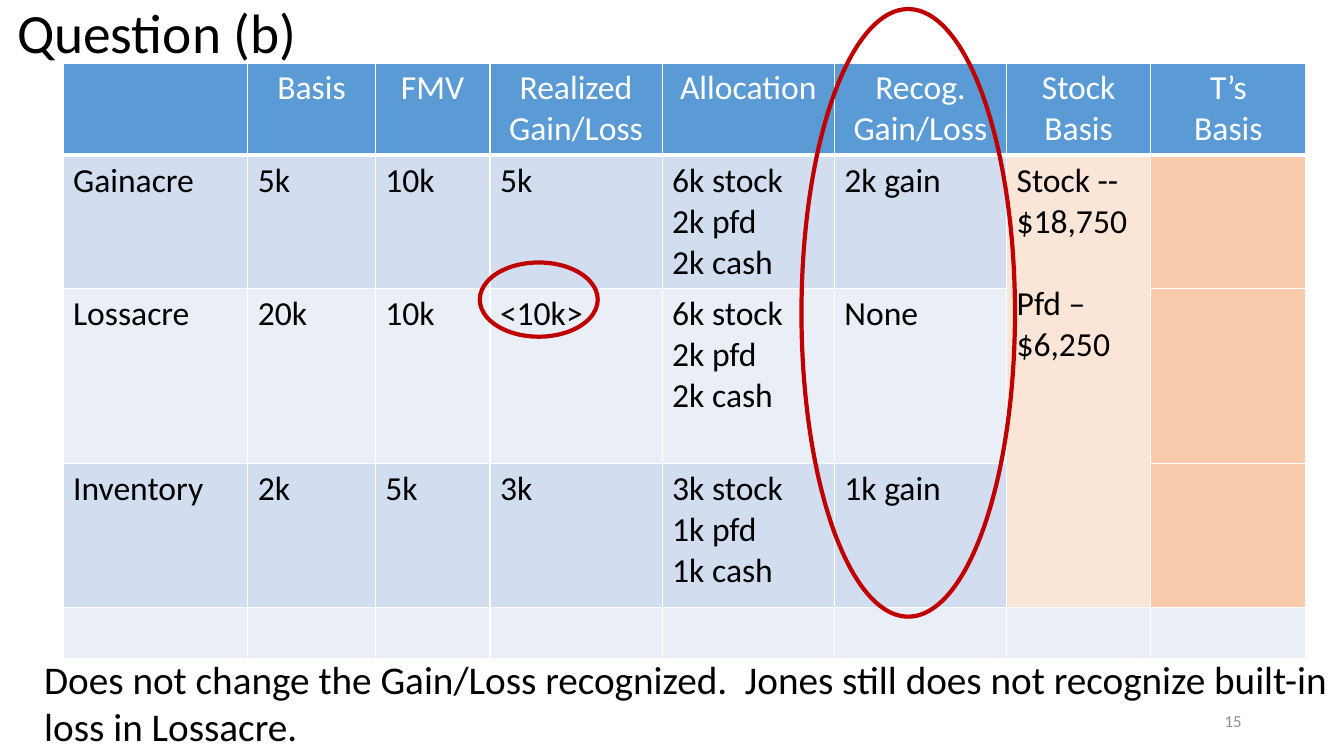
"""Build the Question (b) slide on gain and loss recognized."""
from typing import NamedTuple

from lxml import etree
from pptx import Presentation
from pptx import util as u
from pptx.dml.color import RGBColor
from pptx.enum import shapes, text
from pptx.oxml import ns

FONT = "Calibri"
BLACK, WHITE, RED, GREY = "000000", "FFFFFF", "C00000", "8C8C8C"
HEAD, BAND, PALE = "5B9BD5", "D2DEEF", "EAEFF7"
PEACH, ORANGE = "FBE5D6", "F8CBAD"
LEFT, RIGHT, CENTER = text.PP_ALIGN.LEFT, text.PP_ALIGN.RIGHT, text.PP_ALIGN.CENTER
TOP, MIDDLE = text.MSO_ANCHOR.TOP, text.MSO_ANCHOR.MIDDLE


class Box(NamedTuple):
    left: float
    top: float
    width: float
    height: float


class Note(NamedTuple):
    box: Box
    words: str
    size: float
    color: str
    align: text.PP_ALIGN
    anchor: text.MSO_ANCHOR


TITLE = Note(Box(5, 6.5, 214.5, 38), "Question (b)", 39.6, BLACK, LEFT, MIDDLE)
NOTES = [
    Note(Box(678, 500.5, 216, 28.75), "15", 12, GREY, RIGHT, MIDDLE),
    Note(Box(24.5, 464.5, 943, 99.5),
         "Does not change the Gain/Loss recognized.  Jones still does not "
         "recognize built-in loss in Lossacre.", 28, BLACK, LEFT, TOP),
]
RINGS = [Box(342.75, 187.5, 84.25, 53), Box(572.5, 6.5, 152.5, 434)]
GRID = Box(45, 45, 888, 424)
WIDTHS = [132, 91, 82, 123, 123, 123, 103, 111]
HEIGHTS = [65, 95.5, 124.5, 103, 36]
ROWS = [
    ["", "Basis", "FMV", "Realized\nGain/Loss", "Allocation",
     "Recog.\nGain/Loss", "Stock\nBasis", "T’s\nBasis"],
    ["Gainacre", "5k", "10k", "5k", "6k stock\n2k pfd\n2k cash", "2k gain",
     "Stock -- $18,750\nPfd –\n$6,250", ""],
    ["Lossacre", "20k", "10k", "<10k>", "6k stock\n2k pfd\n2k cash", "None", "", ""],
    ["Inventory", "2k", "5k", "3k", "3k stock\n1k pfd\n1k cash", "1k gain", "", ""],
    [""] * 8,
]
STOCK, ASSETS = 6, range(1, 4)


def rgb(code: str) -> RGBColor:
    return RGBColor.from_string(code)


def places(box: Box) -> list:
    return [u.Pt(side) for side in box]


def style(frame, size: float, color: str, align) -> None:
    for para in frame.paragraphs:
        para.alignment = align
        para.font.name = FONT
        para.font.size = u.Pt(size)
        para.font.color.rgb = rgb(color)


def write(shape, note: Note) -> None:
    frame = shape.text_frame
    frame.text = note.words
    frame.word_wrap = True
    frame.auto_size = text.MSO_AUTO_SIZE.NONE
    frame.vertical_anchor = note.anchor
    style(frame, note.size, note.color, note.align)


def add_title(slide) -> None:
    shape = slide.shapes.title
    shape.left, shape.top, shape.width, shape.height = places(TITLE.box)
    write(shape, TITLE)
    shape.text_frame.paragraphs[0].line_spacing = 0.9


def add_edges(cell, base: float) -> None:
    props = cell._tc.get_or_add_tcPr()
    sides = {"a:lnL": 1, "a:lnR": 1, "a:lnT": 1, "a:lnB": base}
    for spot, (tag, width) in enumerate(sides.items()):
        line = etree.Element(ns.qn(tag), w=str(u.Pt(width)))
        fill = etree.SubElement(line, ns.qn("a:solidFill"))
        etree.SubElement(fill, ns.qn("a:srgbClr"), val=WHITE)
        props.insert(spot, line)


def shade(row: int, col: int) -> str:
    if row == 0:
        return HEAD
    if row in ASSETS and col >= STOCK:
        return PEACH if col == STOCK else ORANGE
    return BAND if row % 2 else PALE


def add_grid(slide) -> None:
    table = slide.shapes.add_table(len(ROWS), len(WIDTHS), *places(GRID)).table
    for col, width in zip(table.columns, WIDTHS):
        col.width = u.Pt(width)
    for row, height in zip(table.rows, HEIGHTS):
        row.height = u.Pt(height)
    for r, words in enumerate(ROWS):
        for c, word in enumerate(words):
            cell = table.cell(r, c)
            cell.text = word
            cell.fill.solid()
            cell.fill.fore_color.rgb = rgb(shade(r, c))
            add_edges(cell, 1 if r else 3)
            style(cell.text_frame, 24, BLACK if r else WHITE, LEFT if r else CENTER)
    stock = table.cell(ASSETS[0], STOCK)
    stock.merge(table.cell(ASSETS[-1], STOCK))
    stock.text_frame.paragraphs[1].space_before = u.Pt(29.3)


def add_ring(slide, box: Box) -> None:
    ring = slide.shapes.add_shape(shapes.MSO_SHAPE.OVAL, *places(box))
    ring.shadow.inherit = False
    ring.fill.background()
    ring.line.color.rgb = rgb(RED)
    ring.line.width = u.Pt(3)


def main() -> None:
    deck = Presentation()
    deck.slide_width, deck.slide_height = u.Pt(960), u.Pt(540)
    slide = deck.slides.add_slide(deck.slide_layouts.get_by_name("Title Only"))
    add_title(slide)
    add_grid(slide)
    for note in NOTES:
        write(slide.shapes.add_textbox(*places(note.box)), note)
    for box in RINGS:
        add_ring(slide, box)
    deck.save("out.pptx")


if __name__ == "__main__":
    main()
